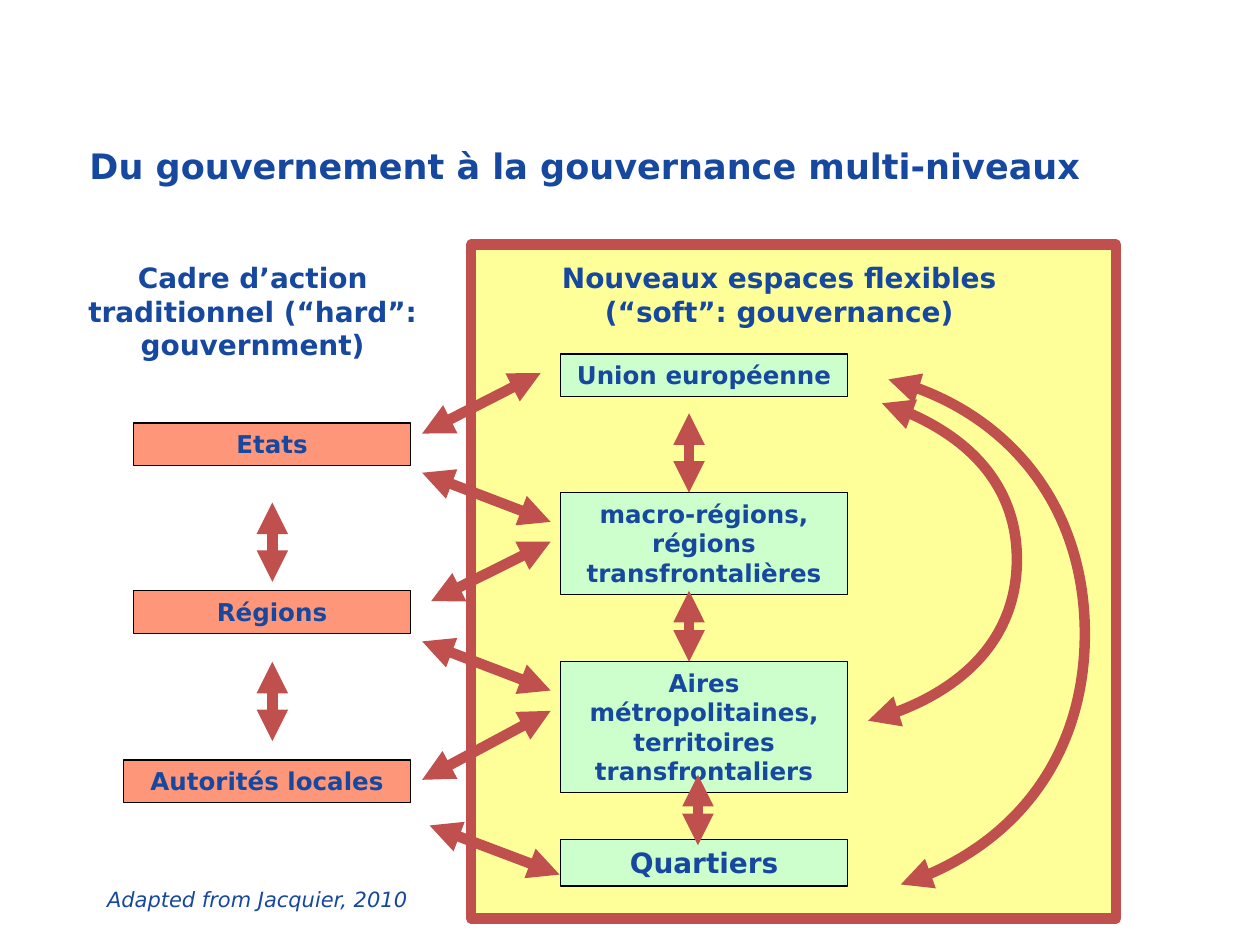
from lxml.etree import SubElement
from pptx import Presentation
from pptx.dml.color import RGBColor
from pptx.enum.shapes import MSO_CONNECTOR, MSO_SHAPE
from pptx.enum.text import MSO_ANCHOR, MSO_AUTO_SIZE, PP_ALIGN
from pptx.oxml.ns import qn
from pptx.util import Cm, Pt

FONT = "DejaVu Sans"
BLUE = RGBColor(0x16, 0x48, 0x9F)
RED = RGBColor(0xC0, 0x50, 0x4D)
YELLOW = RGBColor(0xFF, 0xFF, 0x99)
GREEN = RGBColor(0xCC, 0xFF, 0xCC)
SALMON = RGBColor(0xFE, 0x96, 0x7A)
BLACK = RGBColor(0, 0, 0)

# Content, lengths in centimetres
TITLE = "Du gouvernement à la gouvernance multi-niveaux"
SOURCE = "Adapted from Jacquier, 2010"
HEADINGS = [  # text, (left, top, width, height)
    ("Cadre d’action traditionnel (“hard”: gouvernment)", (1.3, 5.13, 7.59, 2.31)),
    ("Nouveaux espaces flexibles (“soft”: gouvernance)", (10.11, 5.13, 11.2, 1.63)),
]
PANEL = (9.5, 4.93, 13, 13.59)
HARD_RIGHT, HARD_HEIGHT = 8.28, 0.86
HARD_LEVELS = [  # text, top, width
    ("Etats", 8.53, 5.59),
    ("Régions", 11.91, 5.59),
    ("Autorités locales", 15.32, 5.79),
]
SOFT_LEFT, SOFT_WIDTH = 11.3, 5.79
SOFT_LEVELS = [  # text, top, height, font size
    ("Union européenne", 7.14, 0.86, 14),
    ("macro-régions, régions transfrontalières", 9.93, 2.06, 14),
    ("Aires métropolitaines, territoires transfrontaliers", 13.34, 2.64, 14),
    ("Quartiers", 16.92, 0.94, 16),
]
VERTICAL_LINKS = [  # x, top, bottom
    (5.49, 10.13, 11.73), (5.49, 13.34, 14.94),
    (13.89, 8.33, 9.93), (13.89, 11.91, 13.34), (14.07, 15.62, 17.04),
]
CROSS_LINKS = [  # x1, y1, x2, y2
    (8.51, 8.74, 10.9, 7.52), (8.51, 9.53, 11.1, 10.52),
    (8.69, 12.12, 11.1, 10.92), (8.51, 12.93, 11.1, 13.92),
    (8.51, 15.72, 11.1, 14.33), (8.66, 16.64, 11.28, 17.63),
]
ARCS = [  # start point, then three Bézier points per curve
    [(17.91, 7.65), (20.24, 8.2), (21.87, 10.34), (21.87, 12.78),
     (21.87, 15.11), (20.37, 17.17), (18.16, 17.83)],
    [(17.78, 8.13), (19.41, 8.61), (20.5, 9.88), (20.5, 11.28),
     (20.5, 12.78), (19.28, 14.1), (17.5, 14.53)],
]


def write(sp, text, size, align=PP_ALIGN.CENTER, bold=True, italic=False):
    tf = sp.text_frame
    tf.text = text
    tf.word_wrap = True
    tf.vertical_anchor = MSO_ANCHOR.TOP
    p = tf.paragraphs[0]
    p.alignment = align
    font = p.runs[0].font
    font.name, font.size, font.bold, font.italic = FONT, Pt(size), bold, italic
    font.color.rgb = BLUE
    return tf


def add_box(s, place, fill, line, width):
    sp = s.shapes.add_shape(MSO_SHAPE.RECTANGLE, *map(Cm, place))
    sp.shadow.inherit = False
    sp.fill.solid()
    sp.fill.fore_color.rgb = fill
    sp.line.color.rgb = line
    sp.line.width = Pt(width)
    return sp


def style_arrow(sp):
    sp.line.color.rgb = RED
    sp.line.width = Pt(6)
    ln = sp.line._get_or_add_ln()
    for end in ("a:headEnd", "a:tailEnd"):
        SubElement(ln, qn(end), type="triangle")
    SubElement(sp._element.spPr, qn("a:effectLst"))


def add_arrow(s, *ends):
    style_arrow(s.shapes.add_connector(MSO_CONNECTOR.STRAIGHT, *map(Cm, ends)))


def add_arc(s, points):
    start, *rest = [(Cm(x), Cm(y)) for x, y in points]
    builder = s.shapes.build_freeform(*start)
    builder.add_line_segments(rest, close=False)
    sp = builder.convert_to_shape()
    sp.fill.background()
    # Join every three line points into one Bézier curve
    path = sp._element.spPr.find(".//" + qn("a:path"))
    lines = path.findall(qn("a:lnTo"))
    for i in range(0, len(lines), 3):
        curve = SubElement(path, qn("a:cubicBezTo"))
        for line in lines[i:i + 3]:
            curve.append(line[0])
            path.remove(line)
    style_arrow(sp)


prs = Presentation()
prs.slide_width, prs.slide_height = Cm(25.4), Cm(19.05)
s = prs.slides.add_slide(prs.slide_layouts[5])

# Title
title = s.shapes.title
title.left, title.top, title.width, title.height = map(Cm, (1.55, 2.39, 22.07, 1.9))
tf = write(title, TITLE, 20, PP_ALIGN.LEFT)
tf.vertical_anchor = MSO_ANCHOR.MIDDLE
tf.auto_size = MSO_AUTO_SIZE.NONE

# Panel and column headings
add_box(s, PANEL, YELLOW, RED, 6)
for text, place in HEADINGS:
    write(s.shapes.add_textbox(*map(Cm, place)), text, 16)

# Levels of government
for text, top, width in HARD_LEVELS:
    place = (HARD_RIGHT - width, top, width, HARD_HEIGHT)
    write(add_box(s, place, SALMON, BLACK, 0.75), text, 14)
for text, top, height, size in SOFT_LEVELS:
    place = (SOFT_LEFT, top, SOFT_WIDTH, height)
    write(add_box(s, place, GREEN, BLACK, 0.75), text, size)

# Links between levels
for x, top, bottom in VERTICAL_LINKS:
    add_arrow(s, x, top, x, bottom)
for link in CROSS_LINKS:
    add_arrow(s, *link)
for arc in ARCS:
    add_arc(s, arc)

# Source
sp = s.shapes.add_textbox(*map(Cm, (1.91, 17.75, 6.86, 0.76)))
tf = write(sp, SOURCE, 12, PP_ALIGN.LEFT, bold=False, italic=True)
tf.word_wrap = False
tf.vertical_anchor = MSO_ANCHOR.MIDDLE

prs.save("out.pptx")
